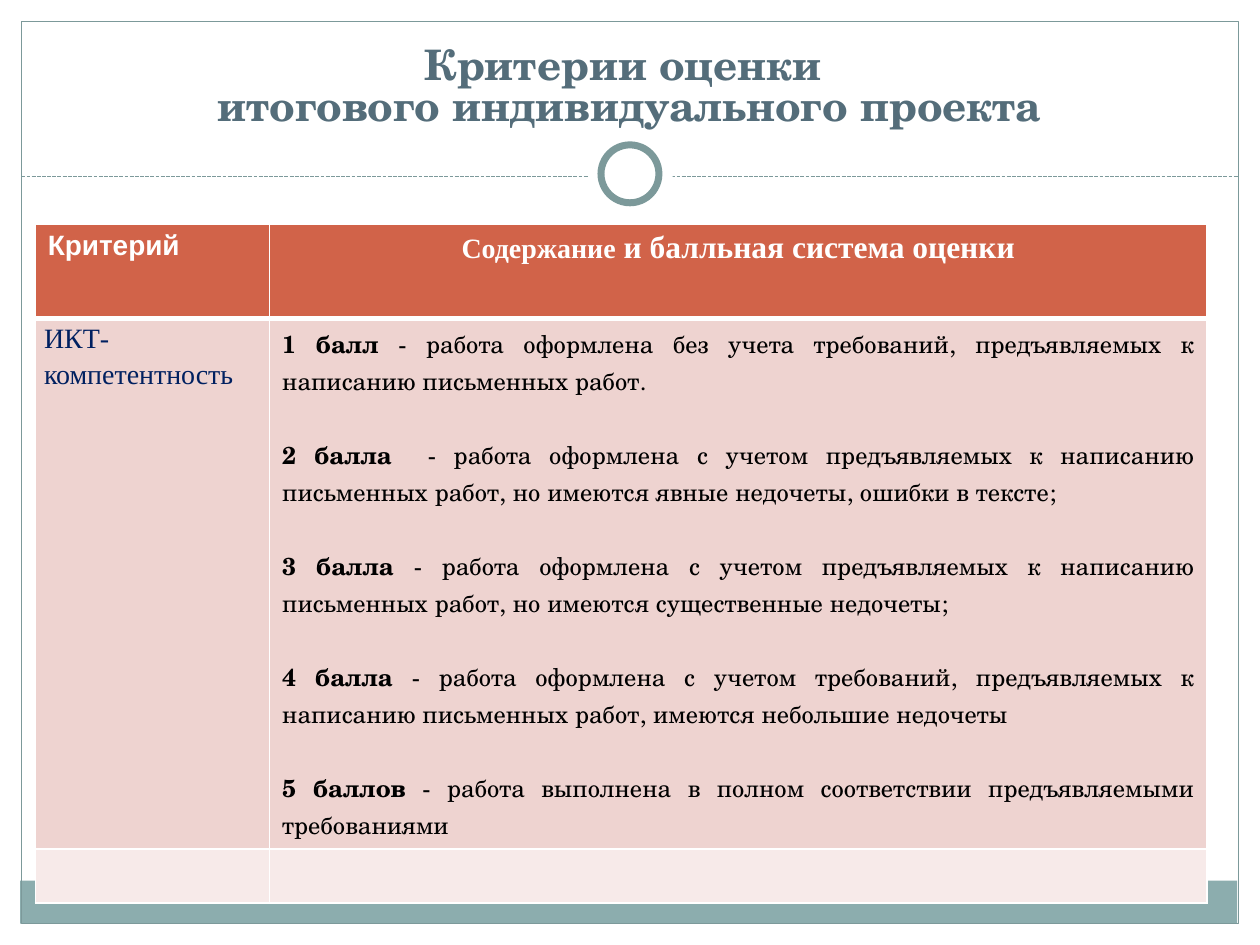
from lxml.etree import SubElement
from pptx import Presentation
from pptx.dml.color import RGBColor
from pptx.enum.dml import MSO_LINE
from pptx.enum.shapes import MSO_CONNECTOR, MSO_SHAPE
from pptx.enum.text import MSO_ANCHOR, MSO_AUTO_SIZE, PP_ALIGN
from pptx.oxml.ns import qn
from pptx.util import Inches, Pt

THEME = {
    "white": "FFFFFF", "frame": "7C999A", "band": "8CADAE", "title": "546D7A",
    "header": "D16349", "row": "EED3D0", "last_row": "F7EAE9",
    "topic": "002060", "text": "000000",
    "serif": "TeX Gyre Schola", "sans": "Arial", "roman": "Times New Roman",
    "title_size": 24, "wide_size": 18, "head_size": 16, "text_size": 14,
    "score_gap": 21,
}

TITLE = "Критерии оценки \vитогового индивидуального проекта"
HEADERS = ("Критерий", ("Содержание", " и балльная система оценки"))
TOPIC = "ИКТ-компетентность"
SCORES = [
    ("1 балл ", "- работа оформлена без учета требований, предъявляемых к написанию письменных работ."),
    ("2 балла  ", "- работа оформлена с учетом предъявляемых к написанию письменных работ, но имеются явные недочеты, ошибки в тексте;"),
    ("3 балла ", "- работа оформлена с учетом предъявляемых к написанию письменных работ, но имеются существенные недочеты;"),
    ("4 балла ", "- работа оформлена с учетом требований, предъявляемых к написанию письменных работ, имеются небольшие недочеты"),
    ("5 баллов ", "- работа выполнена в полном соответствии предъявляемыми требованиями"),
]

BACKDROP = [
    (MSO_SHAPE.RECTANGLE, (0, 0, 10, 1.52), "white", 0),
    (MSO_SHAPE.RECTANGLE, (0, 0, 0.17, 7.5), "white", 0),
    (MSO_SHAPE.RECTANGLE, (9.83, 0, 0.17, 7.5), "white", 0),
    (MSO_SHAPE.RECTANGLE, (0.16, 6.99, 9.66, 0.34), "band", 0),
    (MSO_SHAPE.RECTANGLE, (0.17, 0.17, 9.66, 7.16), None, 0.75),
]
RING = [
    (MSO_SHAPE.OVAL, (4.67, 1.05, 0.67, 0.67), "white", 0),
    (MSO_SHAPE.OVAL, (4.77, 1.15, 0.46, 0.46), "white", 4),
]
TITLE_BOX = (0.33, 0.25, 9.33, 0.83)
TABLE_LEFT, TABLE_TOP = 0.28, 1.78
COLUMNS = (1.86, 7.44)
ROWS = (0.75, 4.18, 0.43)


def color(name):
    return RGBColor.from_string(THEME[name])


def style(font, size, face, tint, bold=None):
    font.size = Pt(THEME[size])
    font.name = THEME[face]
    font.color.rgb = color(tint)
    font.bold = bold


def add_decoration(page, kind, place, fill, width):
    shape = page.shapes.add_shape(kind, *map(Inches, place))
    shape.shadow.inherit = False
    if fill:
        shape.fill.solid()
        shape.fill.fore_color.rgb = color(fill)
    else:
        shape.fill.background()
    if width:
        shape.line.color.rgb = color("frame")
        shape.line.width = Pt(width)
    else:
        shape.line.fill.background()


def add_divider(page):
    ends = map(Inches, (0.17, 1.4, 9.83, 1.4))
    divider = page.shapes.add_connector(MSO_CONNECTOR.STRAIGHT, *ends)
    divider.line.color.rgb = color("frame")
    divider.line.width = Pt(0.75)
    divider.line.dash_style = MSO_LINE.SQUARE_DOT
    SubElement(divider.element.spPr, qn("a:effectLst"))


def add_title(page):
    title = page.shapes.title
    page.shapes.element.append(title.element)
    title.left, title.top, title.width, title.height = map(Inches, TITLE_BOX)
    frame = title.text_frame
    frame.auto_size = MSO_AUTO_SIZE.NONE
    frame.vertical_anchor = MSO_ANCHOR.BOTTOM
    frame.text = TITLE
    para = frame.paragraphs[0]
    para.alignment = PP_ALIGN.CENTER
    para.line_spacing = 0.82
    style(para.font, "title_size", "serif", "title", True)


def format_cell(cell, fill, top, bottom):
    properties = cell._tc.get_or_add_tcPr()
    for side, width in (("L", 1), ("R", 1), ("T", top), ("B", bottom)):
        line = SubElement(properties, qn(f"a:ln{side}"), w=str(Pt(width)))
        paint = SubElement(line, qn("a:solidFill"))
        SubElement(paint, qn("a:srgbClr"), val=THEME["white"])
    cell.fill.solid()
    cell.fill.fore_color.rgb = color(fill)


def add_span(para, text):
    span = para.add_run()
    span.text = text
    return span


def fill_headers(table):
    para = table.cell(0, 0).text_frame.paragraphs[0]
    add_span(para, HEADERS[0])
    style(para.font, "head_size", "sans", "white", True)
    para = table.cell(0, 1).text_frame.paragraphs[0]
    para.alignment = PP_ALIGN.CENTER
    for text, size in zip(HEADERS[1], ("head_size", "wide_size")):
        style(add_span(para, text).font, size, "roman", "white", True)


def fill_topic(cell):
    cell.margin_left = cell.margin_right = Inches(0.07)
    cell.margin_top = cell.margin_bottom = 0
    para = cell.text_frame.paragraphs[0]
    add_span(para, TOPIC)
    para.alignment = PP_ALIGN.JUSTIFY
    para.line_spacing = 1.15
    style(para.font, "head_size", "roman", "topic", False)


def fill_scores(cell):
    frame = cell.text_frame
    for index, (score, meaning) in enumerate(SCORES):
        para = frame.add_paragraph() if index else frame.paragraphs[0]
        para.alignment = PP_ALIGN.JUSTIFY
        if index:
            para.space_before = Pt(THEME["score_gap"])
        style(para.font, "text_size", "serif", "text")
        add_span(para, score).font.bold = True
        add_span(para, meaning).font.bold = False


def add_criteria(page):
    place = (TABLE_LEFT, TABLE_TOP, sum(COLUMNS), sum(ROWS))
    table = page.shapes.add_table(len(ROWS), len(COLUMNS), *map(Inches, place)).table
    for column, width in zip(table.columns, COLUMNS):
        column.width = Inches(width)
    looks = (("header", 1, 3), ("row", 3, 1), ("last_row", 1, 1))
    for row, height, look in zip(table.rows, ROWS, looks):
        row.height = Inches(height)
        for cell in row.cells:
            format_cell(cell, *look)
    fill_headers(table)
    fill_topic(table.cell(1, 0))
    fill_scores(table.cell(1, 1))


def main():
    deck = Presentation()
    deck.slide_width, deck.slide_height = Inches(10), Inches(7.5)
    page = deck.slides.add_slide(deck.slide_layouts[5])
    for decoration in BACKDROP:
        add_decoration(page, *decoration)
    add_divider(page)
    for decoration in RING:
        add_decoration(page, *decoration)
    add_title(page)
    add_criteria(page)
    deck.save("out.pptx")


if __name__ == "__main__":
    main()
